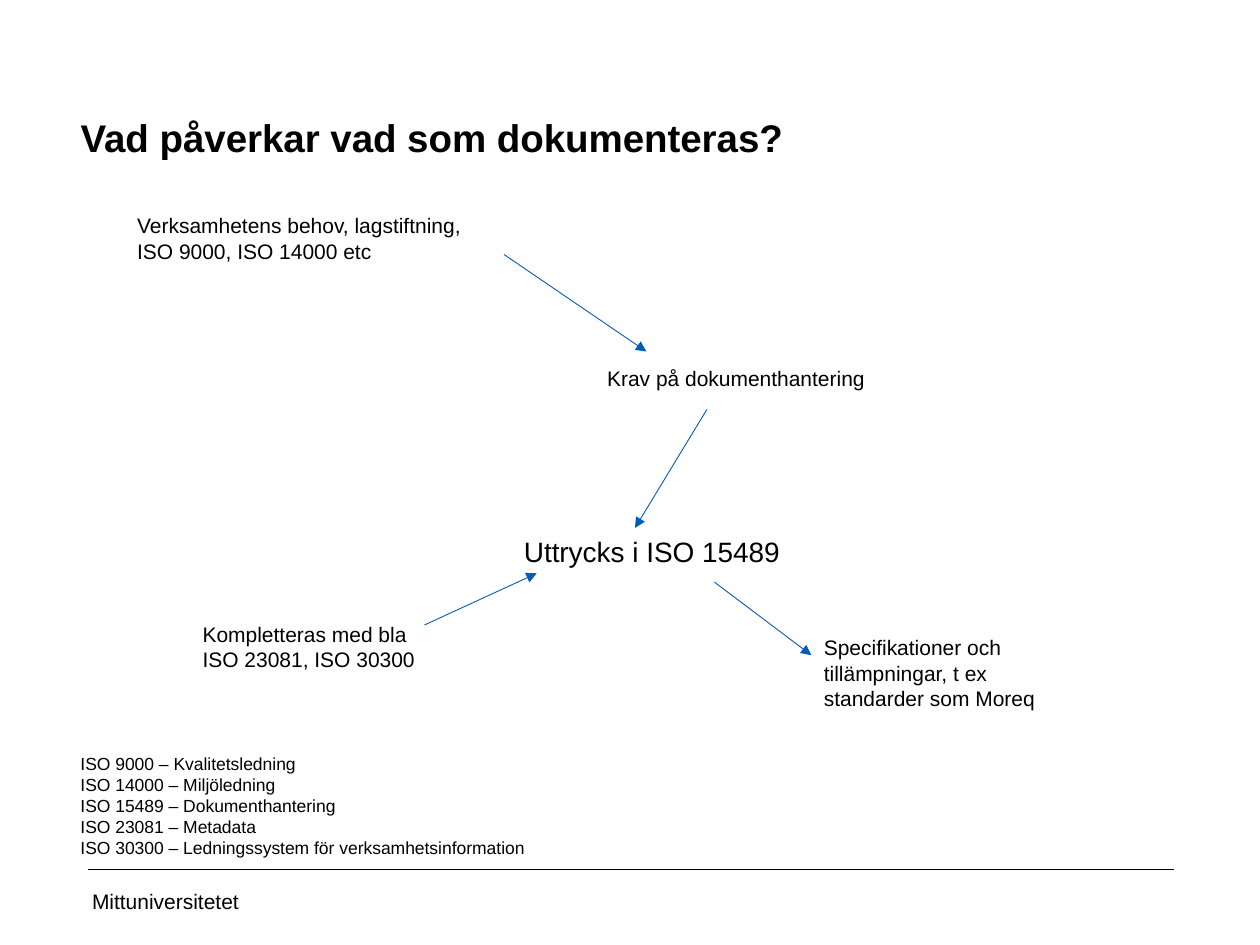
from lxml import etree
from pptx import Presentation
from pptx.dml.color import RGBColor
from pptx.enum.shapes import MSO_CONNECTOR
from pptx.enum.text import MSO_ANCHOR, MSO_AUTO_SIZE, PP_ALIGN
from pptx.oxml.ns import qn
from pptx.util import Inches, Pt

STRAIGHT = MSO_CONNECTOR.STRAIGHT
MIDDLE, TOP = MSO_ANCHOR.MIDDLE, MSO_ANCHOR.TOP
FIT_SHAPE, NO_FIT = MSO_AUTO_SIZE.SHAPE_TO_FIT_TEXT, MSO_AUTO_SIZE.NONE
LEFT = PP_ALIGN.LEFT

BLACK = RGBColor(0x00, 0x00, 0x00)
BLUE = RGBColor(0x00, 0x5C, 0xB9)
FONT = "Arial"

COLUMNS, ROWS = 100, 75
CELL = Inches(0.1)

TITLE = "Vad påverkar vad som dokumenteras?"
FOOTER = "Mittuniversitetet"
STEPS = [
    ((9.9, 16.4, 28.4, 8.1), 12,
     ["Verksamhetens behov, lagstiftning, ", "ISO 9000, ISO 14000 etc"]),
    ((47.2, 28.5, 22.6, 6.1), 12, ["Krav på dokumenthantering"]),
    ((40.6, 41.9, 22.6, 3.7), 16, ["Uttrycks i ISO 15489"]),
    ((15.1, 48.8, 19, 5), 12,
     ["Kompletteras med bla", "ISO 23081, ISO 30300"]),
    ((64.4, 49.9, 18.9, 7.1), 12,
     ["Specifikationer och", "tillämpningar, t ex", "standarder som Moreq"]),
]
ARROWS = [
    ((40, 20.2), (51.3, 27.9)),
    ((56.1, 32.5), (50.4, 41.9)),
    ((33.7, 49.6), (42.6, 45.5)),
    ((56.7, 46.2), (64.4, 52)),
]
STANDARDS = [
    "ISO 9000 – Kvalitetsledning",
    "ISO 14000 – Miljöledning",
    "ISO 15489 – Dokumenthantering",
    "ISO 23081 – Metadata",
    "ISO 30300 – Ledningssystem för verksamhetsinformation",
]


def grid(*cells):
    """Turn numbers of grid cells into slide lengths."""
    return [round(cell * CELL) for cell in cells]


def apply_format(target, values):
    """Set attributes of an object from a dict."""
    for name, value in values.items():
        setattr(target, name, value)


def write_lines(text_frame, lines, size, bold=False):
    """Write one left-aligned paragraph for each line."""
    for index, line in enumerate(lines):
        paragraph = text_frame.add_paragraph() if index else text_frame.paragraphs[0]
        paragraph.alignment = LEFT
        run = paragraph.add_run()
        run.text = line
        apply_format(run.font, {"name": FONT, "size": Pt(size), "bold": bold})
        run.font.color.rgb = BLACK


def add_label(slide, box, lines, size, **frame_format):
    """Add a text box that fills the given box."""
    text_frame = slide.shapes.add_textbox(*grid(*box)).text_frame
    apply_format(text_frame, {"word_wrap": False, "auto_size": FIT_SHAPE,
                              "vertical_anchor": TOP, **frame_format})
    write_lines(text_frame, lines, size)


def add_line(slide, start, end, color, width, arrow=False):
    """Add a straight line, with an arrowhead at its end if asked."""
    connector = slide.shapes.add_connector(STRAIGHT, *grid(*start, *end))
    connector.line.color.rgb = color
    connector.line.width = Pt(width)
    properties = connector.line._get_or_add_ln()
    if arrow:
        etree.SubElement(properties, qn("a:tailEnd"), type="triangle")
    etree.SubElement(connector._element.spPr, qn("a:effectLst"))


def place_title(slide, box):
    """Move and format the title placeholder."""
    title = slide.shapes.title
    apply_format(title, dict(zip(("left", "top", "width", "height"), grid(*box))))
    apply_format(title.text_frame, {"word_wrap": True, "auto_size": NO_FIT,
                                    "vertical_anchor": MIDDLE})
    write_lines(title.text_frame, [TITLE], 22, bold=True)
    title.text_frame.paragraphs[0].line_spacing = Pt(36)


def place_flow(slide, box):
    """Place the steps and their arrows relative to the box."""
    left, top = box[:2]
    for (column, row, width, height), size, lines in STEPS:
        add_label(slide, (left + column, top + row, width, height), lines, size)
    for start, end in ARROWS:
        add_line(slide, (left + start[0], top + start[1]),
                 (left + end[0], top + end[1]), BLUE, 0.5, arrow=True)


def place_footer(slide, box):
    """Place the footer rule on the top edge of the box, with the name below."""
    left, top, width, height = box
    add_line(slide, (left, top), (left + width, top), BLACK, 0.25)
    add_label(slide, (left - 0.1, top + 0.5, 22.5, height - 0.5), [FOOTER], 12,
              word_wrap=True, auto_size=NO_FIT, vertical_anchor=MIDDLE,
              margin_left=Inches(0.04))


def main():
    """Build and save the slide."""
    presentation = Presentation()
    presentation.slide_width, presentation.slide_height = grid(COLUMNS, ROWS)
    slide = presentation.slides.add_slide(presentation.slide_layouts[5])
    place_footer(slide, (7, 69, 86.2, 4.5))
    place_title(slide, (5.4, 6.2, 86.4, 8.1))
    place_flow(slide, (0, 0, COLUMNS, ROWS))
    add_label(slide, (5.4, 59.3, 37.5, 9.4), STANDARDS, 10)
    presentation.save("out.pptx")


if __name__ == "__main__":
    main()
